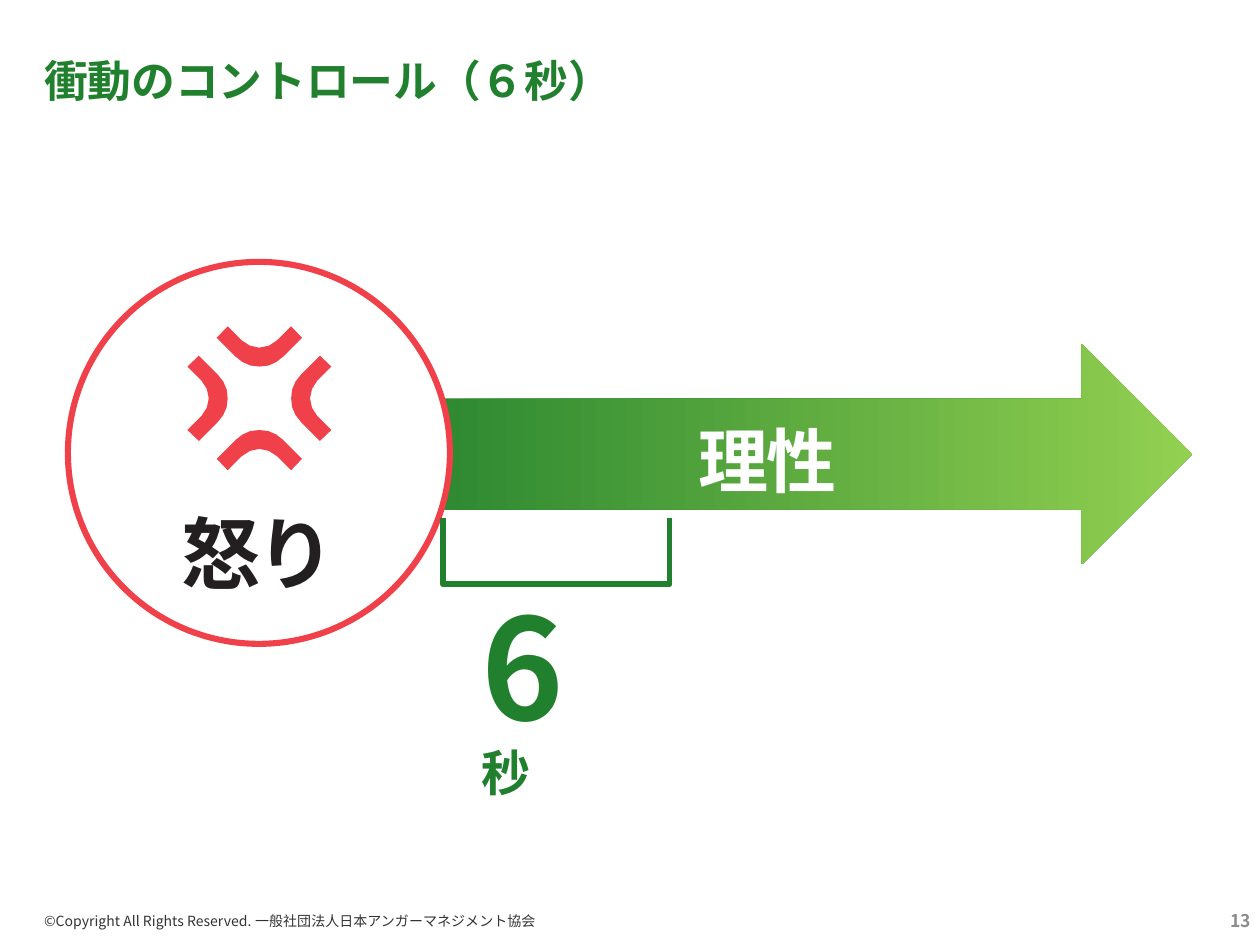
"""Builds a slide on controlling an impulse for six seconds, until reason takes over."""
from dataclasses import dataclass

from lxml.etree import SubElement
from pptx import Presentation
from pptx.dml.color import RGBColor
from pptx.enum.shapes import MSO_SHAPE
from pptx.enum.text import MSO_ANCHOR, PP_ALIGN
from pptx.oxml.ns import qn
from pptx.util import Cm, Pt


@dataclass(frozen=True)
class Theme:
    green: str = "21802D"
    lime: str = "92D050"
    red: str = "F04049"
    ink: str = "231F20"
    white: str = "FFFFFF"
    footer_grey: str = "333333"
    number_grey: str = "8C8C8C"
    heading_font: str = "Arial"
    body_font: str = "Noto Sans CJK JP"
    footer_size: float = 8
    number_size: float = 10
    title_size: float = 25
    unit_size: float = 28
    reason_size: float = 40
    anger_size: float = 45
    count_size: float = 80


class SlideBuilder:
    def __init__(self, page, theme):
        self.page = page
        self.theme = theme

    def text(self, frame, spans, font=None, align=PP_ALIGN.LEFT, anchor=MSO_ANCHOR.TOP,
             top=0, right=0, spacing=None):
        box = self.page.shapes.add_textbox(*map(Cm, frame)).text_frame
        box.word_wrap = True
        box.vertical_anchor = anchor
        box.margin_left = box.margin_bottom = 0
        box.margin_top, box.margin_right = Cm(top), Cm(right)
        para = box.paragraphs[0]
        para.alignment = align
        if spacing:
            para.line_spacing = spacing
        for words, size, color, bold, tracking in spans:
            span = para.add_run()
            span.text = words
            span.font.size = Pt(size)
            span.font.bold = bold
            span.font.color.rgb = RGBColor.from_string(color)
            span.font.name = font or self.theme.body_font
            properties = span.font._element
            SubElement(properties, qn("a:ea")).set("typeface", self.theme.body_font)
            if tracking:
                properties.set("spc", str(round(tracking * 100)))

    def paint(self, shape, fill=None, line=None, width=0):
        shape.shadow.inherit = False
        if fill:
            shape.fill.solid()
            shape.fill.fore_color.rgb = RGBColor.from_string(fill)
        else:
            shape.fill.background()
        if line:
            shape.line.color.rgb = RGBColor.from_string(line)
            shape.line.width = Pt(width)
        else:
            shape.line.fill.background()

    def arrow(self, frame, start, end):
        shape = self.page.shapes.add_shape(MSO_SHAPE.RIGHT_ARROW, *map(Cm, frame))
        self.paint(shape)
        shape.fill.gradient()
        shape.fill.gradient_angle = 0
        for stop, position, color in zip(shape.fill.gradient_stops, (0, 1), (start, end)):
            stop.position = position
            stop.color.rgb = RGBColor.from_string(color)

    def circle(self, frame, fill, line, width):
        shape = self.page.shapes.add_shape(MSO_SHAPE.OVAL, *map(Cm, frame))
        self.paint(shape, fill, line, width)

    def outline(self, contours, closed=True, **style):
        paths = [[(Cm(x), Cm(y)) for x, y in contour] for contour in contours]
        builder = self.page.shapes.build_freeform(*paths[0][0])
        for number, path in enumerate(paths):
            if number:
                builder.move_to(*path[0])
            builder.add_line_segments(path[1:], close=closed)
        self.paint(builder.convert_to_shape(), **style)

    def anger_mark(self, x, y):
        upper = [(-0.64, 0), (-0.66, -0.18), (-0.73, -0.34), (-0.84, -0.48), (-1.22, -0.86),
                 (-1.45, -0.64), (-1.17, -0.36), (-1.06, -0.19), (-1.02, 0)]
        arm = upper + [(across, -down) for across, down in upper[-2:0:-1]]
        arms = []
        for _ in range(4):
            arms.append([(x + across, y + down) for across, down in arm])
            arm = [(-down, across) for across, down in arm]
        self.outline(arms, fill=self.theme.red)


def main():
    theme = Theme()
    deck = Presentation()
    deck.slide_width, deck.slide_height = Cm(25.4), Cm(19.05)
    page = deck.slides.add_slide(deck.slide_layouts[6])
    slide = SlideBuilder(page, theme)

    slide.text((0.89, 18.36, 10.34, 0.38),
               [("©Copyright All Rights Reserved. 一般社団法人日本アンガーマネジメント協会",
                 theme.footer_size, theme.footer_grey, False, 0)], top=0.03)
    slide.text((19.38, 18.34, 5.84, 0.43),
               [("13", theme.number_size, theme.number_grey, True, 0)], align=PP_ALIGN.RIGHT)
    slide.text((0.89, 1.07, 23.22, 1.07),
               [("衝動のコントロール（６秒）", theme.title_size, theme.green, True, 0)],
               font=theme.heading_font, anchor=MSO_ANCHOR.MIDDLE)

    slide.arrow((6.91, 6.93, 17.12, 4.45), theme.green, theme.lime)
    slide.circle((1.37, 5.28, 7.7, 7.7), theme.white, theme.red, 3.5)
    slide.text((6.91, 8.31, 17.12, 1.8),
               [("理性", theme.reason_size, theme.white, True, -0.7)],
               align=PP_ALIGN.CENTER, top=0.1)
    slide.text((9.7, 12.12, 3.05, 3.45),
               [("6", theme.count_size, theme.green, True, 0.1),
                ("秒", theme.unit_size, theme.green, True, 0)],
               top=0.03, right=1, spacing=0.88)
    slide.anger_mark(5.23, 8.03)
    slide.text((2.84, 10.08, 4.75, 2.03),
               [("怒り", theme.anger_size, theme.ink, True, -2)],
               align=PP_ALIGN.CENTER, top=0.1)
    slide.outline([[(8.93, 10.45), (8.93, 11.78), (13.5, 11.78), (13.5, 10.45)]],
                  closed=False, line=theme.green, width=3.25)

    deck.save("out.pptx")


if __name__ == "__main__":
    main()
